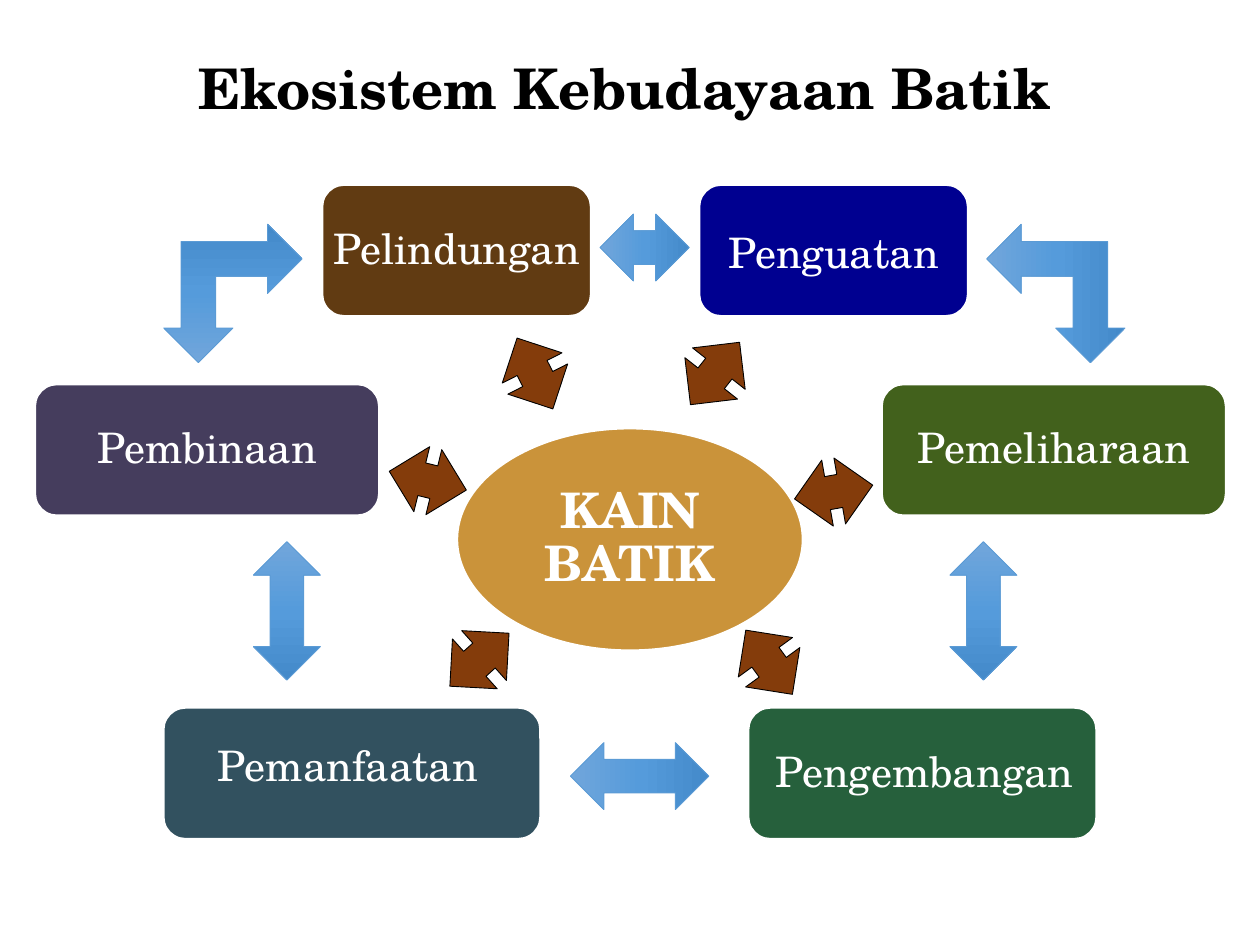
from copy import deepcopy

from pptx import Presentation
from pptx.dml.color import RGBColor
from pptx.enum.shapes import MSO_SHAPE
from pptx.enum.text import MSO_ANCHOR, PP_ALIGN
from pptx.oxml.ns import qn
from pptx.util import Cm, Pt

ELLIPSE = MSO_SHAPE.OVAL
ROUNDED = MSO_SHAPE.ROUNDED_RECTANGLE
DOUBLE_ARROW = MSO_SHAPE.UP_DOWN_ARROW
CORNER_ARROW = MSO_SHAPE.LEFT_UP_ARROW
MIDDLE = MSO_ANCHOR.MIDDLE
CENTER = PP_ALIGN.CENTER

FONT = "TeX Gyre Schola"
COLORS = {
    "black": "000000", "white": "FFFFFF", "gold": "CA933A", "brown": "613B12",
    "navy": "000090", "olive": "42611C", "green": "26603C", "teal": "32515F",
    "purple": "453D5D", "rust": "843C0B", "blue line": "5B9BD5",
    "blue light": "71A6DB", "blue mid": "559BDB", "blue dark": "448ACA",
}
BLUE_STOPS = [(0, "blue light"), (0.5, "blue mid"), (1, "blue dark")]

BOX_HEIGHT = 2.64
TOP_ROW, MIDDLE_ROW, BOTTOM_ROW = 3.73, 7.75, 14.27
ARROW_WIDTH = 1.35
SPOKE_LENGTH = 1.6
LINK_LENGTH = 2.79
INSET = 0.12

# text, left, top, width, colour, text shift right, text shift down
BOXES = [
    ("Pelindungan", 6.5, TOP_ROW, 5.41, "brown", 0, 0),
    ("Penguatan", 14.1, TOP_ROW, 5.41, "navy", 0, 0.08),
    ("Pembinaan", 0.71, MIDDLE_ROW, 6.93, "purple", 0, 0),
    ("Pemeliharaan", 17.78, MIDDLE_ROW, 6.93, "olive", 0, 0),
    ("Pemanfaatan", 3.3, BOTTOM_ROW, 7.59, "teal", -0.08, -0.1),
    ("Pengembangan", 15.09, BOTTOM_ROW, 7.01, "green", 0.04, 0.01),
]
# left, top, rotation
SPOKES = [
    (10.11, 6.73, 333.2), (13.74, 6.73, 38.2), (16.13, 9.12, 80),
    (14.83, 12.55, 324), (8.99, 12.5, 48.1), (7.95, 8.89, 283.7),
]
# kind, left, top, width, length, rotation
LINKS = [
    (CORNER_ARROW, 3.3, 4.52, LINK_LENGTH, LINK_LENGTH, 180),
    (CORNER_ARROW, 19.89, 4.52, LINK_LENGTH, LINK_LENGTH, 270),
    (DOUBLE_ARROW, 5.11, 10.92, ARROW_WIDTH, LINK_LENGTH, 0),
    (DOUBLE_ARROW, 19.15, 10.92, ARROW_WIDTH, LINK_LENGTH, 0),
    (DOUBLE_ARROW, 12.22, 14.25, ARROW_WIDTH, LINK_LENGTH, 270),
    (DOUBLE_ARROW, 12.32, 4.09, ARROW_WIDTH, 1.8, 270),
]


def color(name):
    return RGBColor.from_string(COLORS[name])


def add_shape(page, kind, left, top, width, height, line, line_width):
    shape = page.shapes.add_shape(kind, Cm(left), Cm(top), Cm(width), Cm(height))
    shape.shadow.inherit = False
    shape.line.color.rgb = color(line)
    shape.line.width = Pt(line_width)
    return shape


def fill_solid(shape, name):
    shape.fill.solid()
    shape.fill.fore_color.rgb = color(name)


def fill_blue(shape):
    """Fill with the three-stop blue gradient, running top to bottom."""
    shape.fill.gradient()
    shape.fill.gradient_angle = 270
    stop_list = shape._element.spPr.find(".//" + qn("a:gsLst"))
    stop_list.append(deepcopy(stop_list[-1]))
    for stop, (position, name) in zip(shape.fill.gradient_stops, BLUE_STOPS):
        stop.position = position
        stop.color.rgb = color(name)


def write(shape, text, size, name, bold=False, wrap=True, right=0, down=0):
    """Put centred text in a shape, shifted by uneven insets where asked."""
    frame = shape.text_frame
    frame.word_wrap = wrap
    frame.vertical_anchor = MIDDLE
    frame.margin_left, frame.margin_right = Cm(INSET + right), Cm(INSET - right)
    frame.margin_top, frame.margin_bottom = Cm(INSET + down), Cm(INSET - down)
    para = frame.paragraphs[0]
    para.text = text
    para.alignment = CENTER
    para.line_spacing = 0.9
    para.font.name = FONT
    para.font.size = Pt(size)
    para.font.bold = bold
    para.font.color.rgb = color(name)


def add_title(page):
    box = page.shapes.add_textbox(Cm(0.5), Cm(0.76), Cm(24.2), Cm(2.16))
    write(box, "Ekosistem Kebudayaan Batik", 32, "black", bold=True)


def add_center(page):
    ellipse = add_shape(page, ELLIPSE, 9.22, 8.64, 6.96, 4.47, "white", 1)
    fill_solid(ellipse, "gold")
    write(ellipse, "KAIN BATIK", 28, "white", bold=True)


def add_box(page, text, left, top, width, name, right, down):
    box = add_shape(page, ROUNDED, left, top, width, BOX_HEIGHT, "white", 1)
    fill_solid(box, name)
    write(box, text, 24, "white", wrap=False, right=right, down=down)


def add_spoke(page, left, top, rotation):
    """Add a short arrow between the centre and a box."""
    arrow = add_shape(page, DOUBLE_ARROW, left, top, ARROW_WIDTH, SPOKE_LENGTH,
                      "black", 0.5)
    arrow.rotation = rotation
    fill_solid(arrow, "rust")


def add_link(page, kind, left, top, width, length, rotation):
    """Add a blue arrow between two neighbouring boxes."""
    arrow = add_shape(page, kind, left, top, width, length, "blue line", 0.5)
    arrow.rotation = rotation
    fill_blue(arrow)


def main():
    deck = Presentation()
    deck.slide_width, deck.slide_height = Cm(25.4), Cm(19.05)
    page = deck.slides.add_slide(deck.slide_layouts[6])
    add_title(page)
    add_center(page)
    for box in BOXES:
        add_box(page, *box)
    for spoke in SPOKES:
        add_spoke(page, *spoke)
    for link in LINKS:
        add_link(page, *link)
    deck.save("out.pptx")


if __name__ == "__main__":
    main()
